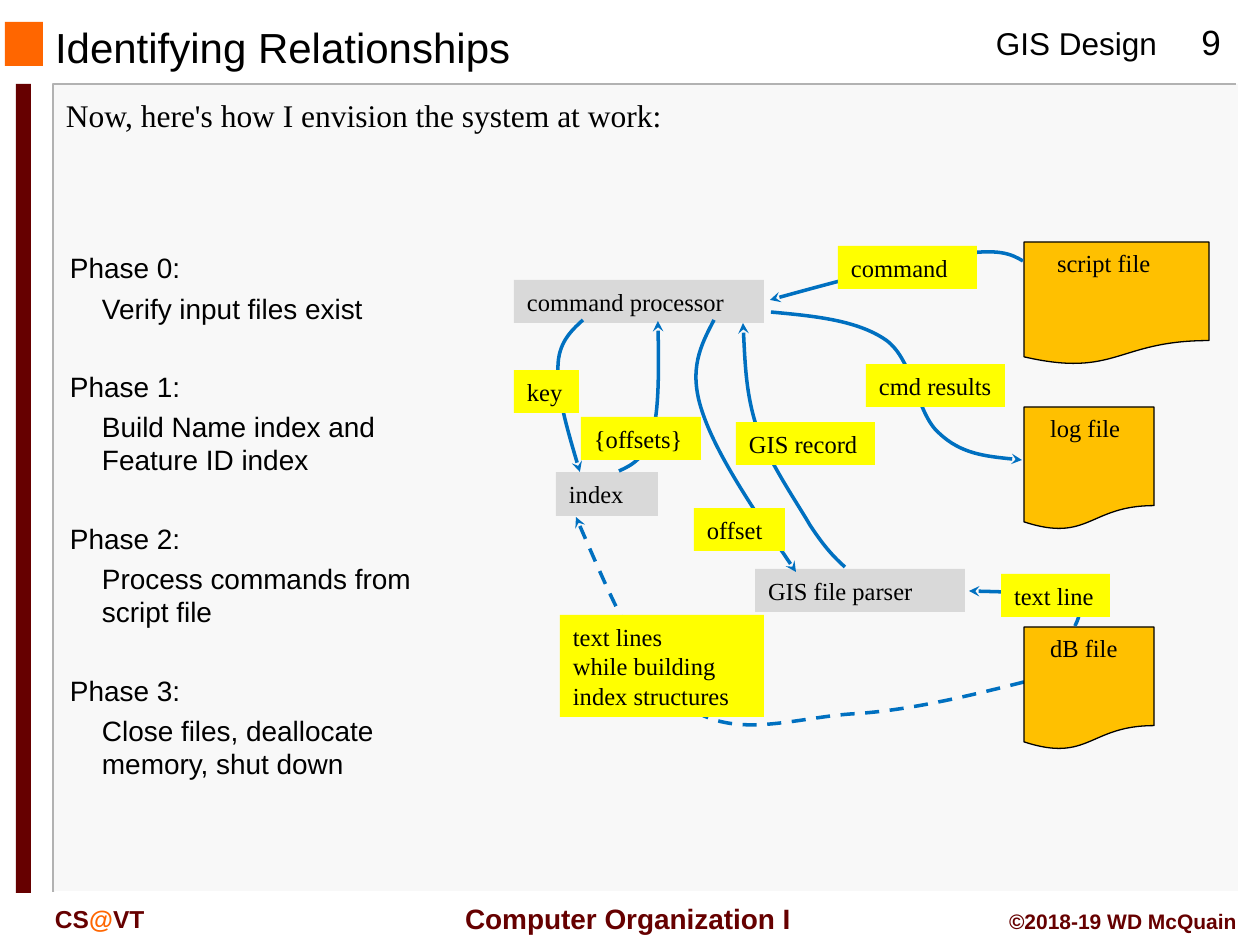
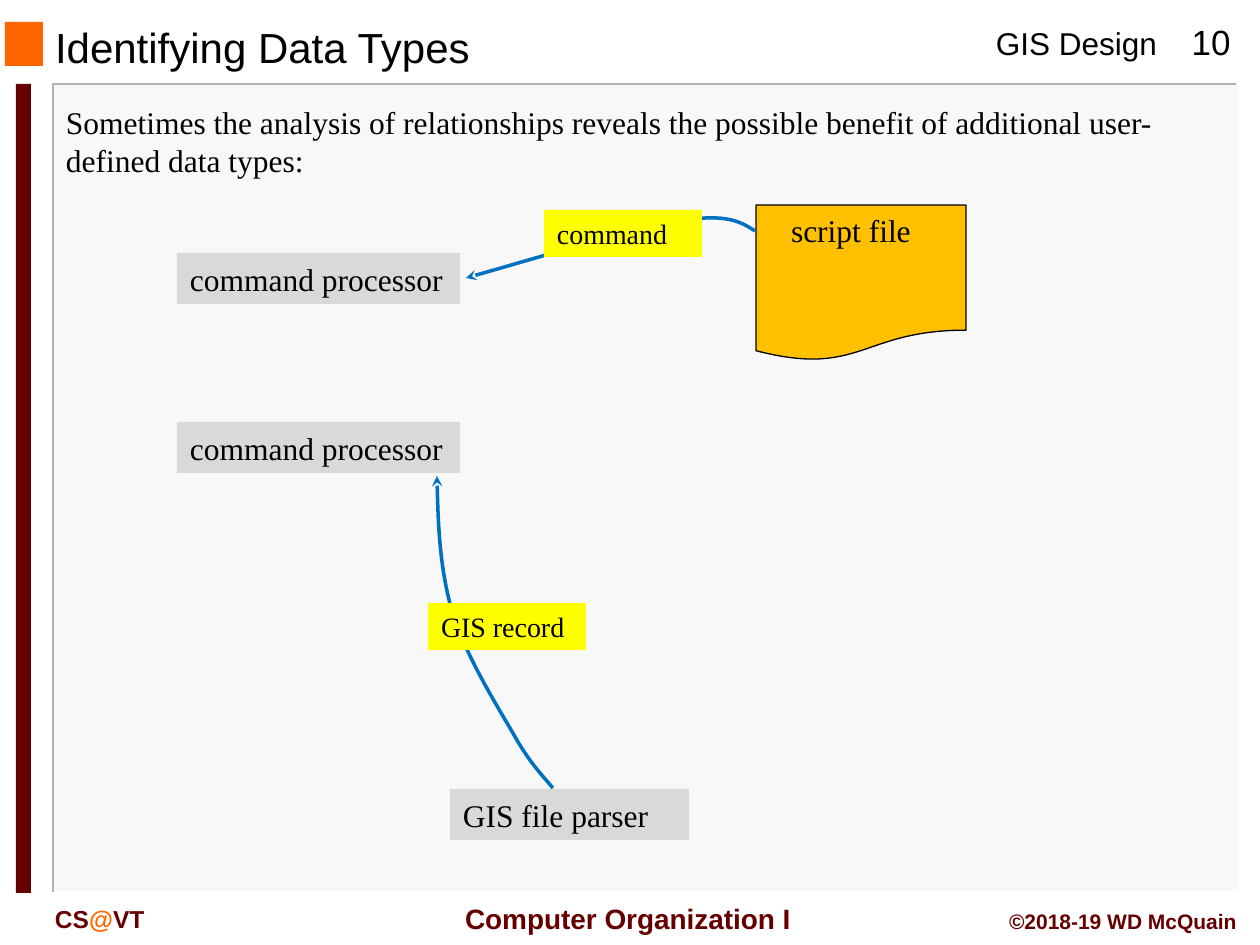
from lxml import etree
from pptx import Presentation
from pptx.dml.color import RGBColor
from pptx.enum.dml import MSO_LINE
from pptx.enum.shapes import MSO_SHAPE
from pptx.enum.text import MSO_ANCHOR, MSO_AUTO_SIZE, PP_ALIGN
from pptx.oxml.ns import qn
from pptx.util import Emu, Pt

PX = 914400 / 126
SLIDE_SIZE = (1260, 945)
SANS, SERIF = "Arial", "Times New Roman"
RECTANGLE, DOCUMENT = MSO_SHAPE.RECTANGLE, MSO_SHAPE.FLOWCHART_DOCUMENT
LEFT, CENTER, RIGHT = PP_ALIGN.LEFT, PP_ALIGN.CENTER, PP_ALIGN.RIGHT
TOP, MIDDLE = MSO_ANCHOR.TOP, MSO_ANCHOR.MIDDLE
DASH = MSO_LINE.DASH
TITLE_AND_BODY, TITLE_ONLY = 1, 5
INSET_X, INSET_Y = 13, 6

COLORS = {
    "text": "000000",
    "panel": "F8F8F8",
    "panel_edge": "B2B2B2",
    "panel_light": "FFFFFF",
    "accent": "FF6600",
    "maroon": "660000",
    "node": "D9D9D9",
    "file": "FFC000",
    "label": "FFFF00",
    "arrow": "0070C0",
}

PHASES = [
    ("Phase 0:", "Verify input files exist"),
    ("Phase 1:", "Build Name index and Feature ID index"),
    ("Phase 2:", "Process commands from script file"),
    ("Phase 3:", "Close files, deallocate memory, shut down"),
]

SYSTEM_NODES = [
    ("index", (556, 472, 102, 44)),
    ("GIS file parser", (755, 569, 210, 43)),
    ("command processor", (514, 280, 250, 43)),
]
SYSTEM_FILES = [
    ("dB file", (1024, 627, 130, 123), 26),
    ("script file", (1024, 242, 185, 123), 33),
    ("log file", (1024, 407, 130, 123), 26),
]
# Each arrow is a start point followed by three points per Bézier segment.
SYSTEM_ARROWS = [
    [(1023, 261), (1011, 254), (999, 248), (956, 255),
     (915, 261), (842, 280), (770, 300)],
    [(771, 312), (814, 316), (857, 320), (886, 340),
     (914, 360), (916, 413), (939, 433), (961, 454), (992, 457), (1022, 460)],
    [(583, 320), (571, 331), (558, 343), (558, 368),
     (557, 393), (568, 432), (580, 472)],
    [(619, 471), (633, 465), (646, 457), (653, 432),
     (659, 408), (659, 364), (658, 321)],
    [(714, 320), (701, 345), (688, 369), (702, 411),
     (716, 454), (756, 513), (796, 572)],
    [(845, 567), (835, 558), (825, 548), (810, 525),
     (796, 501), (769, 462), (757, 428), (746, 394), (745, 359), (743, 323)],
    [(1075, 626), (1080, 616), (1084, 605), (1067, 599),
     (1050, 593), (1009, 592), (969, 591)],
]
INDEX_BUILD_ARROW = [
    (1024, 682), (965, 697), (906, 711), (851, 714), (794, 718), (735, 740),
    (688, 707), (643, 674), (610, 595), (576, 517),
]
SYSTEM_LABELS = [
    ("command", (838, 246, 139, 43)),
    ("cmd results", (866, 364, 139, 43)),
    ("GIS record", (736, 422, 139, 43)),
    ("key", (514, 370, 65, 43)),
    ("{offsets}", (581, 417, 120, 43)),
    ("offset", (694, 508, 91, 43)),
    ("text line", (1001, 574, 109, 43)),
    ("text lines\nwhile building index structures", (560, 615, 204, 102)),
]

TYPE_NODES = [
    ("command processor", (177, 253, 283, 51)),
    ("GIS file parser", (450, 789, 239, 51)),
    ("command processor", (177, 422, 283, 51)),
]
TYPE_ARROWS = [
    [(755, 231), (741, 222), (727, 213), (679, 221),
     (631, 229), (548, 255), (466, 278)],
    [(553, 788), (542, 775), (529, 762), (513, 733),
     (496, 704), (465, 654), (452, 611), (440, 568), (438, 522), (437, 476)],
]
TYPE_LABELS = [
    ("command", (544, 210, 158, 47)),
    ("GIS record", (428, 603, 158, 47)),
]


def px(length):
    return Emu(round(length * PX))


def color(name):
    return RGBColor.from_string(COLORS[name])


def style_font(font, size, face, tone="text", bold=False):
    font.size = Pt(size)
    font.name = face
    font.bold = bold
    font.color.rgb = color(tone)


def setup_frame(frame, anchor=TOP, left_inset=INSET_X):
    frame.word_wrap = True
    frame.auto_size = MSO_AUTO_SIZE.NONE
    frame.vertical_anchor = anchor
    frame.margin_left, frame.margin_right = px(left_inset), px(INSET_X)
    frame.margin_top = frame.margin_bottom = px(INSET_Y)


def write(frame, text, size, face, tone="text", bold=False, align=LEFT):
    """Fill a frame with one paragraph per line of text."""
    frame.text = text
    for para in frame.paragraphs:
        para.alignment = align
        style_font(para.font, size, face, tone, bold)


def add_text(page, box, text, size, face, **style):
    shape = page.shapes.add_textbox(*map(px, box))
    setup_frame(shape.text_frame)
    write(shape.text_frame, text, size, face, **style)
    return shape


def add_block(page, box, fill, kind=RECTANGLE):
    shape = page.shapes.add_shape(kind, *map(px, box))
    shape.shadow.inherit = False
    shape.fill.solid()
    shape.fill.fore_color.rgb = color(fill)
    shape.line.fill.background()
    return shape


def add_label(page, text, box, size, fill):
    frame = add_block(page, box, fill).text_frame
    setup_frame(frame, MIDDLE)
    write(frame, text, size, SERIF)


def add_file(page, text, box, left_inset, size):
    shape = add_block(page, box, "file", DOCUMENT)
    shape.line.color.rgb = color("text")
    shape.line.width = Pt(0.75)
    setup_frame(shape.text_frame, TOP, left_inset)
    write(shape.text_frame, text, size, SERIF)


def add_open_line(page, points, tone, width):
    builder = page.shapes.build_freeform(*points[0], scale=PX)
    builder.add_line_segments(points[1:], close=False)
    shape = builder.convert_to_shape()
    shape.shadow.inherit = False
    shape.fill.background()
    shape.line.color.rgb = color(tone)
    shape.line.width = Pt(width)
    return shape


def add_curved_arrow(page, points, dash=None):
    shape = add_open_line(page, points, "arrow", 2)
    if dash:
        shape.line.dash_style = dash
    outline = shape.element.find(".//" + qn("a:path"))
    segments = outline.findall(qn("a:lnTo"))
    for start in range(0, len(segments), 3):
        curve = etree.SubElement(outline, qn("a:cubicBezTo"))
        for segment in segments[start:start + 3]:
            curve.append(segment[0])
            outline.remove(segment)
    line = shape.element.spPr.find(qn("a:ln"))
    etree.SubElement(line, qn("a:tailEnd"), type="stealth")


def add_master_frame(deck, page):
    """Draw the shared bands and footers, then move them to the master."""
    add_open_line_args = [
        ([(1236, 84), (53, 84), (53, 892)], "panel_edge"),
        ([(1239, 84), (1239, 892), (55, 892)], "panel_light"),
    ]
    shapes = [add_block(page, (54, 84, 1184, 808), "panel")]
    shapes += [add_open_line(page, points, tone, 1)
               for points, tone in add_open_line_args]
    shapes += [
        add_block(page, (5, 22, 38, 44), "accent"),
        add_block(page, (16, 84, 15, 809), "maroon"),
        add_text(page, (983, 18, 188, 50), "GIS Design", 18, SANS),
        add_text(page, (442, 896, 372, 47), "Computer Organization I", 16, SANS,
                 tone="maroon", bold=True, align=CENTER),
        add_text(page, (882, 903, 368, 38), "©2018-19 WD McQuain", 12, SANS,
                 tone="maroon", bold=True, align=RIGHT),
    ]
    course = add_text(page, (42, 898, 189, 42), "", 14, SANS)
    para = course.text_frame.paragraphs[0]
    for text, tone in [("CS", "maroon"), ("@", "accent"), ("VT", "maroon")]:
        span = para.add_run()
        span.text = text
        style_font(span.font, 14, SANS, tone, bold=True)
    shapes.append(course)

    tree = deck.slide_master.shapes.element
    for number, shape in enumerate(shapes):
        shape.element.find(".//" + qn("p:cNvPr")).set("id", str(100 + number))
        tree.insert(2 + number, shape.element)


def place(shape, box):
    shape.left, shape.top, shape.width, shape.height = map(px, box)


def add_page(deck, layout, title, number):
    page = deck.slides.add_slide(deck.slide_layouts[layout])
    heading = page.shapes.title
    place(heading, (42, 23, 798, 48))
    setup_frame(heading.text_frame, MIDDLE)
    write(heading.text_frame, title, 24, SANS)
    add_text(page, (1169, 14, 84, 54), number, 20, SANS, align=CENTER)
    return page


def add_phases(page):
    body = page.placeholders[1]
    place(body, (57, 245, 416, 535))
    frame = body.text_frame
    setup_frame(frame)
    write(frame, "\n".join(line for phase in PHASES for line in phase), 16, SANS)
    for index, para in enumerate(frame.paragraphs):
        is_step = index % 2 == 1
        gap = 3.7 if is_step else 25.5
        para.space_before = Pt(gap if index else 0)
        settings = para._p.get_or_add_pPr()
        settings.set("marL", str(px(32) if is_step else 0))
        settings.set("indent", "0")
        etree.SubElement(settings, qn("a:buNone"))
        settings.append(settings.find(qn("a:defRPr")))


def add_diagram(page, nodes, files, arrows, labels, node_size, label_size):
    for text, box in nodes:
        add_label(page, text, box, node_size, "node")
    for text, box, left_inset in files:
        add_file(page, text, box, left_inset, node_size)
    for points in arrows:
        add_curved_arrow(page, points)
    for text, box in labels:
        add_label(page, text, box, label_size, "label")


def main():
    deck = Presentation()
    deck.slide_width, deck.slide_height = map(px, SLIDE_SIZE)

    page = add_page(deck, TITLE_AND_BODY, "Identifying Relationships", "9")
    add_master_frame(deck, page)
    add_text(page, (53, 90, 1176, 50),
             "Now, here's how I envision the system at work:", 18, SERIF)
    add_phases(page)
    add_curved_arrow(page, INDEX_BUILD_ARROW, DASH)
    add_diagram(page, SYSTEM_NODES, SYSTEM_FILES, SYSTEM_ARROWS, SYSTEM_LABELS, 14, 14)

    page = add_page(deck, TITLE_ONLY, "Identifying Data Types", "10")
    add_text(page, (53, 97, 1176, 89),
             "Sometimes the analysis of relationships reveals the possible benefit "
             "of additional user-defined data types:", 18, SERIF)
    add_diagram(page, TYPE_NODES, [("script file", (756, 205, 210, 156), 35)],
                TYPE_ARROWS, TYPE_LABELS, 18, 16)

    deck.save("out.pptx")


if __name__ == "__main__":
    main()
